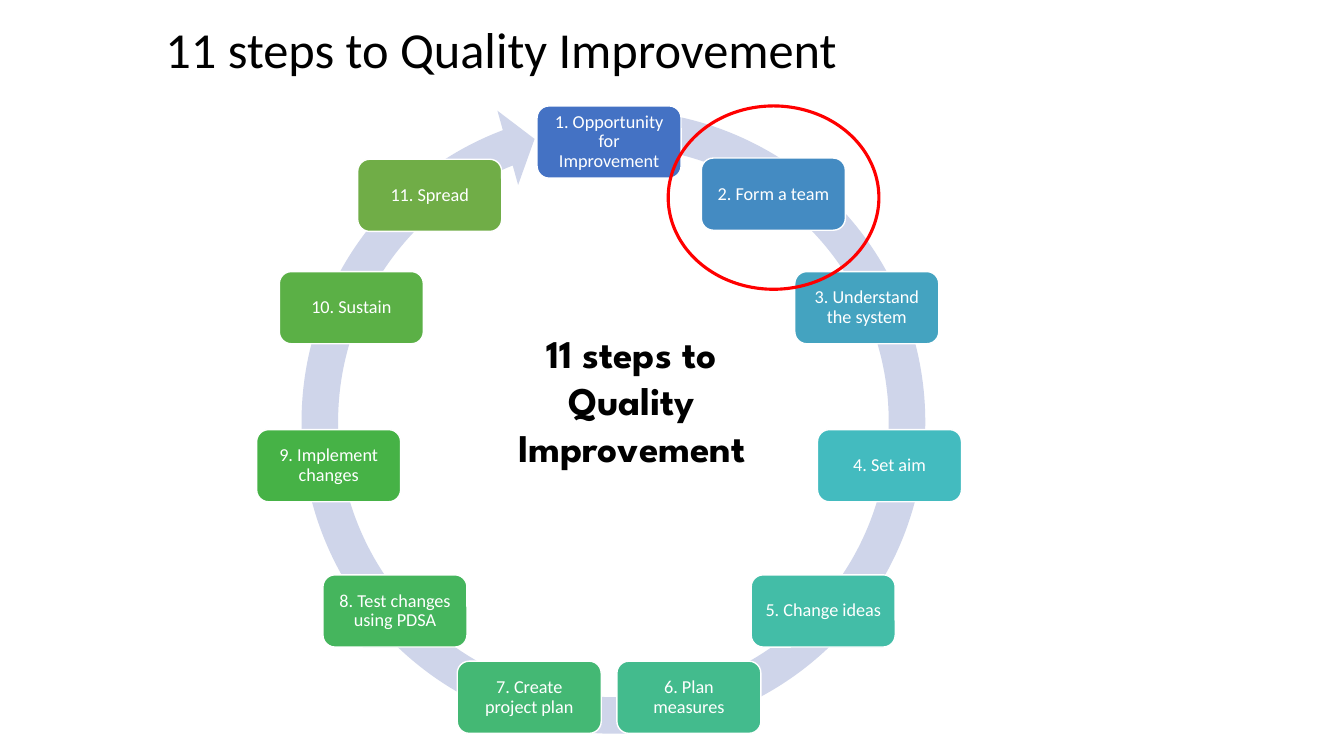
import math

import pptx
import pptx.dml.color
import pptx.enum.shapes
import pptx.enum.text
import pptx.util

Cm = pptx.util.Cm
Pt = pptx.util.Pt
RGBColor = pptx.dml.color.RGBColor
Shapes = pptx.enum.shapes.MSO_SHAPE
Align = pptx.enum.text.PP_ALIGN
Anchor = pptx.enum.text.MSO_ANCHOR

BLACK = RGBColor(0x00, 0x00, 0x00)
WHITE = RGBColor(0xFF, 0xFF, 0xFF)
RED = RGBColor(0xFF, 0x00, 0x00)
RING = RGBColor(0xCF, 0xD5, 0xEA)

# Label and fill of each step, clockwise from the top
STEPS = [
    ("1. Opportunity for Improvement", RGBColor(0x44, 0x72, 0xC4)),
    ("2. Form a team", RGBColor(0x44, 0x8B, 0xC2)),
    ("3. Understand the system", RGBColor(0x44, 0xA3, 0xC0)),
    ("4. Set aim", RGBColor(0x43, 0xBB, 0xBF)),
    ("5. Change ideas", RGBColor(0x43, 0xBD, 0xA7)),
    ("6. Plan measures", RGBColor(0x43, 0xBB, 0x8D)),
    ("7. Create project plan", RGBColor(0x44, 0xB8, 0x74)),
    ("8. Test changes using PDSA", RGBColor(0x45, 0xB5, 0x5D)),
    ("9. Implement changes", RGBColor(0x46, 0xB2, 0x46)),
    ("10. Sustain", RGBColor(0x5B, 0xB0, 0x46)),
    ("11. Spread", RGBColor(0x70, 0xAD, 0x47)),
]
# Steps that sit slightly off the circle, in cm
NUDGES = {1: (0.28, 0.18), 10: (-0.66, 0.21)}

CENTRE_X, CENTRE_Y, RADIUS = 15.35, 10.72, 7.14
STEP_WIDTH, STEP_HEIGHT = 3.63, 1.82


class CycleSlide:
    """Holds the text style and the slide being built."""

    font = "Calibri"

    def __init__(self, presentation):
        self.slide = presentation.slides.add_slide(presentation.slide_layouts[5])

    def add_text(self, shape, text, size, color, align, anchor, font=None, bold=False):
        frame = shape.text_frame
        frame.word_wrap = True
        frame.vertical_anchor = anchor
        paragraph = frame.paragraphs[0]
        paragraph.alignment = align
        run = paragraph.add_run()
        run.text = text
        run.font.name = font or self.font
        run.font.size = Pt(size)
        run.font.bold = bold
        run.font.color.rgb = color
        return paragraph

    def title(self, text, left, top, width, height):
        shape = self.slide.shapes.title
        shape.left, shape.top = Cm(left), Cm(top)
        shape.width, shape.height = Cm(width), Cm(height)
        self.add_text(shape, text, 36, BLACK, Align.LEFT, Anchor.TOP)
        shape.text_frame.auto_size = pptx.enum.text.MSO_AUTO_SIZE.NONE
        shape.text_frame.margin_left = Cm(0.54)

    def shape(self, kind, left, top, width, height, fill=None, line=None, weight=1):
        shape = self.slide.shapes.add_shape(
            kind, Cm(left), Cm(top), Cm(width), Cm(height))
        shape.shadow.inherit = False
        if fill is None:
            shape.fill.background()
        else:
            shape.fill.solid()
            shape.fill.fore_color.rgb = fill
        if line is None:
            shape.line.fill.background()
        else:
            shape.line.color.rgb = line
            shape.line.width = Pt(weight)
        return shape

    def ring(self, left, top, size):
        arrow = self.shape(Shapes.CIRCULAR_ARROW, left, top, size, size, RING)
        for index, value in enumerate((0.055, 3.307, 149.349, 167.136, 0.058)):
            arrow.adjustments[index] = value

    def step(self, text, fill, x, y):
        box = self.shape(Shapes.ROUNDED_RECTANGLE, x - STEP_WIDTH / 2,
                         y - STEP_HEIGHT / 2, STEP_WIDTH, STEP_HEIGHT, fill, WHITE)
        frame = box.text_frame
        frame.margin_left = frame.margin_right = Cm(0.22)
        frame.margin_top = frame.margin_bottom = Cm(0.22)
        paragraph = self.add_text(box, text, 13, WHITE, Align.CENTER, Anchor.MIDDLE)
        paragraph.line_spacing = 0.9

    def caption(self, text, left, top, width, height):
        box = self.slide.shapes.add_textbox(Cm(left), Cm(top), Cm(width), Cm(height))
        self.add_text(box, text, 28, BLACK, Align.CENTER, Anchor.TOP,
                      "League Spartan", True)


def main():
    presentation = pptx.Presentation()
    presentation.slide_width, presentation.slide_height = Cm(33.87), Cm(19.05)
    cycle = CycleSlide(presentation)

    # Title and ring
    cycle.title("11 steps to Quality Improvement", 3.63, 0.33, 24.56, 1.8)
    cycle.ring(7.09, 2.26, 16.74)

    # Steps, evenly spaced around the circle
    for index, (text, fill) in enumerate(STEPS):
        angle = 2 * math.pi * index / len(STEPS)
        shift_x, shift_y = NUDGES.get(index, (0, 0))
        cycle.step(text, fill, CENTRE_X + RADIUS * math.sin(angle) + shift_x,
                   CENTRE_Y - RADIUS * math.cos(angle) + shift_y)

    # Centre caption and highlight of the second step
    cycle.caption("11 steps to Quality Improvement", 11.96, 8.18, 7.92, 3.84)
    cycle.shape(Shapes.OVAL, 16.84, 2.67, 5.31, 4.62, line=RED, weight=2.25)

    presentation.save("out.pptx")


if __name__ == "__main__":
    main()
